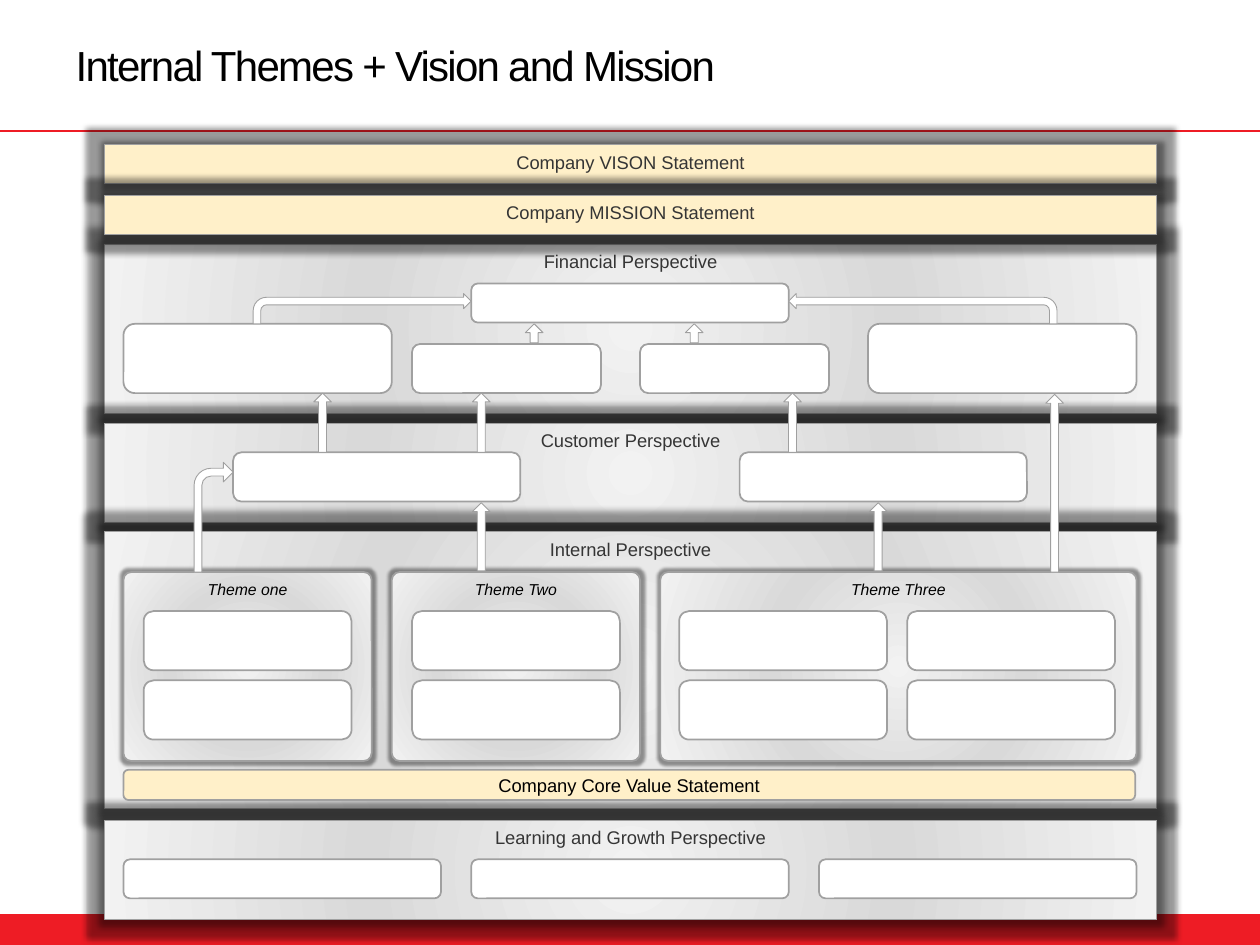
from lxml import etree
from pptx import Presentation
from pptx.dml.color import RGBColor
from pptx.enum.shapes import MSO_CONNECTOR, MSO_SHAPE as SHAPE
from pptx.enum.text import MSO_ANCHOR as ANCHOR, PP_ALIGN as ALIGN
from pptx.oxml import parse_xml
from pptx.oxml.ns import qn
from pptx.util import Inches, Pt

RED = RGBColor(0xEE, 0x1C, 0x25)
CREAM = RGBColor(0xFF, 0xF0, 0xC9)
WHITE = RGBColor(0xFF, 0xFF, 0xFF)
GREY = RGBColor(0xA0, 0xA0, 0xA0)
CHARCOAL = RGBColor(0x35, 0x35, 0x35)
BLACK = RGBColor(0, 0, 0)
SILVER = RGBColor(0xF2, 0xF2, 0xF2)
STEEL = RGBColor(0xD9, 0xD9, 0xD9)

A_NS = "http://schemas.openxmlformats.org/drawingml/2006/main"
STOPS = "".join(
    f'<a:gs pos="{pos}"><a:srgbClr val="{color}"/></a:gs>'
    for pos, color in ((0, SILVER), (50000, STEEL), (100000, SILVER))
)
RADIAL = (
    f'<a:gradFill xmlns:a="{A_NS}" rotWithShape="1"><a:gsLst>{STOPS}</a:gsLst>'
    '<a:path path="circle"><a:fillToRect l="50000" t="50000" r="50000" b="50000"/>'
    "</a:path></a:gradFill>"
)

prs = Presentation()
prs.slide_width, prs.slide_height = Inches(10), Inches(7.5)
slide = prs.slides.add_slide(prs.slide_layouts[5])


def add_box(kind, left, top, width, height, fill=WHITE, line=GREY, weight=1, glow=0):
    box = slide.shapes.add_shape(
        kind, Inches(left), Inches(top), Inches(width), Inches(height))
    box.shadow.inherit = False
    if fill is None:
        box.fill.gradient()
        gradient = box._element.spPr.find(qn("a:gradFill"))
        gradient.getparent().replace(gradient, parse_xml(RADIAL))
    else:
        box.fill.solid()
        box.fill.fore_color.rgb = fill
    box.line.color.rgb = line
    box.line.width = Pt(weight)
    if glow:
        effects = box._element.spPr.find(qn("a:effectLst"))
        effects.append(parse_xml(
            f'<a:glow xmlns:a="{A_NS}" rad="{Inches(glow)}"><a:srgbClr val="000000">'
            '<a:alpha val="40000"/></a:srgbClr></a:glow>'))
    return box


def add_label(box, text, size, color, anchor=ANCHOR.TOP, side=0.1, edge=0.05, italic=None):
    frame = box.text_frame
    frame.word_wrap = True
    frame.vertical_anchor = anchor
    frame.margin_left = frame.margin_right = Inches(side)
    frame.margin_top = frame.margin_bottom = Inches(edge)
    frame.paragraphs[0].alignment = ALIGN.CENTER
    run = frame.paragraphs[0].add_run()
    run.text = text
    run.font.name = "Arial"
    run.font.size = Pt(size)
    run.font.italic = italic
    run.font.color.rgb = color


add_box(SHAPE.RECTANGLE, 0, 7.27, 10, 0.24, RED, RED, 2.08)
rule = slide.shapes.add_connector(
    MSO_CONNECTOR.STRAIGHT, 0, Inches(1.04), Inches(10), Inches(1.04))
rule.line.color.rgb = RED
rule.line.width = Pt(1.5)
etree.SubElement(rule._element.spPr, qn("a:effectLst"))

title = slide.shapes.title
title.left, title.top = Inches(0.5), Inches(0.15)
title.width, title.height = Inches(7.29), Inches(0.72)
heading = title.text_frame
heading.vertical_anchor = ANCHOR.MIDDLE
heading.margin_left = heading.margin_right = Inches(0.1)
heading.margin_top = heading.margin_bottom = 0
heading.paragraphs[0].alignment = ALIGN.LEFT
heading_run = heading.paragraphs[0].add_run()
heading_run.text = "Internal Themes + Vision and Mission"
heading_run.font.name = "Arial"
heading_run.font.size = Pt(24)
heading_run.font.color.rgb = BLACK
heading_run._r.get_or_add_rPr().set("spc", "-100")

for text, top, height, fill in (
    ("Financial Perspective", 1.94, 1.34, None),
    ("Customer Perspective", 3.36, 0.79, None),
    ("Internal Perspective", 4.22, 2.2, None),
    ("Learning and Growth Perspective", 6.51, 0.79, None),
    ("Company VISON Statement", 1.15, 0.31, CREAM),
    ("Company MISSION Statement", 1.55, 0.31, CREAM),
):
    band = add_box(SHAPE.RECTANGLE, 0.83, top, 8.35, height, fill, weight=0.5, glow=0.1)
    add_label(band, text, 10.5, CHARCOAL)

for text, left, width in (
    ("Theme one", 0.98, 1.97),
    ("Theme Two", 3.11, 1.97),
    ("Theme Three", 5.24, 3.78),
):
    theme = add_box(SHAPE.ROUNDED_RECTANGLE, left, 4.54, width, 1.5, None, glow=0.05)
    theme.adjustments[0] = 0.042
    add_label(theme, text, 9, BLACK, side=0.04, edge=0.04, italic=True)

for lefts, tops, width, height in (
    ((3.74,), (2.25,), 2.52, 0.31),
    ((0.98, 6.89), (2.57,), 2.13, 0.55),
    ((3.27, 5.08), (2.73,), 1.5, 0.39),
    ((1.85, 5.87), (3.59,), 2.28, 0.39),
    ((1.14, 3.27, 5.39, 7.2), (4.85, 5.4), 1.65, 0.47),
    ((0.98, 3.74, 6.5), (6.82,), 2.52, 0.31),
):
    for top in tops:
        for left in lefts:
            add_box(SHAPE.ROUNDED_RECTANGLE, left, top, width, height)

add_box(SHAPE.BENT_ARROW, 2.01, 2.33, 1.73, 0.24, weight=0.5)
right_bend = add_box(SHAPE.BENT_ARROW, 6.26, 2.33, 2.13, 0.24, weight=0.5)
right_bend._element.spPr.find(qn("a:xfrm")).set("flipH", "1")
theme_bend = add_box(SHAPE.BENT_ARROW, 1.54, 3.67, 0.31, 0.87, weight=0.5)
for index, ratio in enumerate((0.2, 0.25, 0.25, 0.44)):
    theme_bend.adjustments[index] = ratio

for lefts, top, height in (
    ((2.49, 3.75, 6.22), 3.12, 0.47),
    ((8.3,), 3.13, 1.41),
    ((3.75, 6.9), 3.99, 0.54),
    ((4.17, 5.44), 2.57, 0.15),
):
    for left in lefts:
        arrow = add_box(SHAPE.UP_ARROW, left, top, 0.14, height, weight=0.5)
        arrow.adjustments[0] = 0.45
        arrow.adjustments[1] = 0.5

core_value = add_box(SHAPE.ROUNDED_RECTANGLE, 0.98, 6.11, 8.03, 0.24, CREAM)
add_label(core_value, "Company Core Value Statement", 10.5, BLACK,
          ANCHOR.MIDDLE, side=0.04, edge=0)

prs.save("out.pptx")
